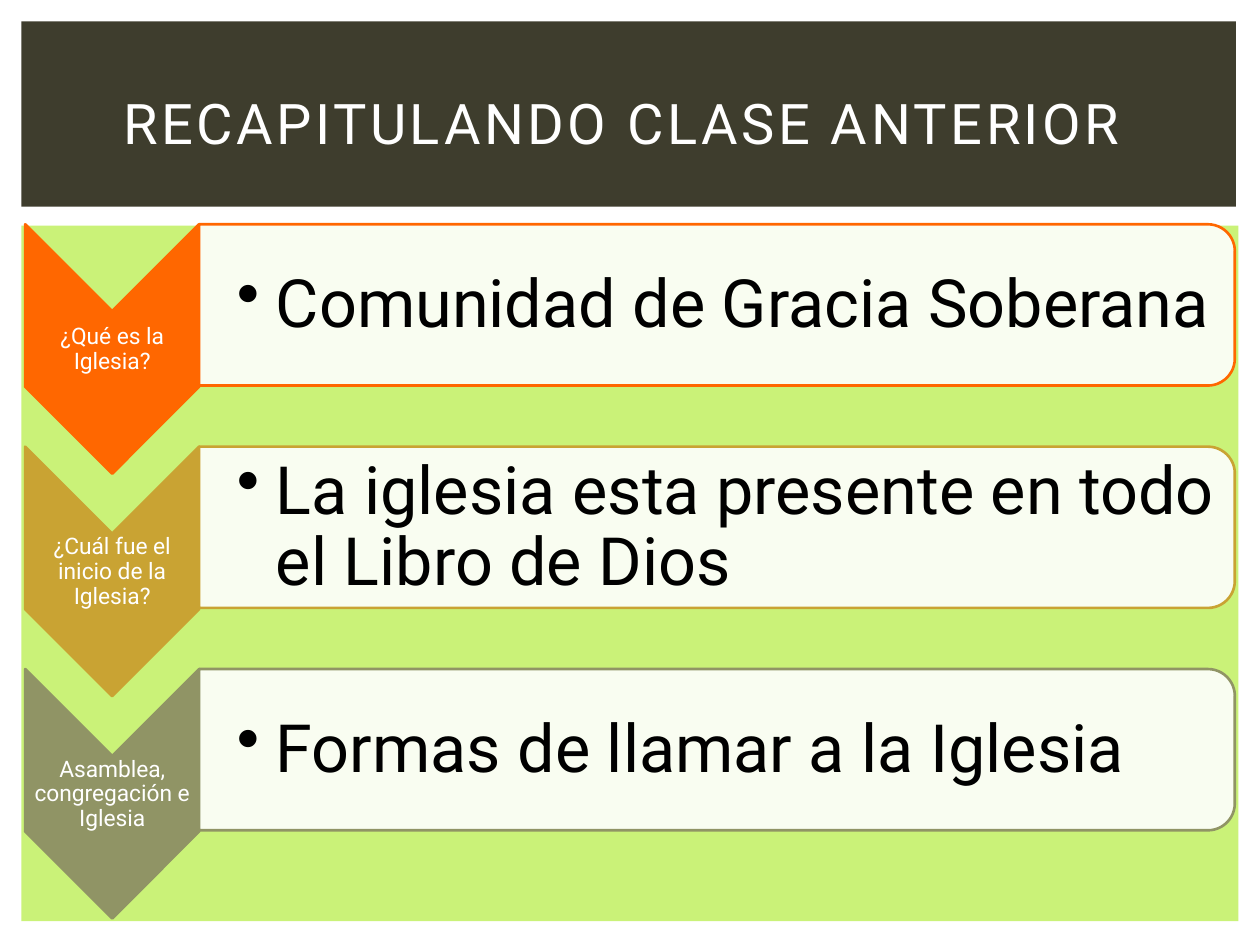
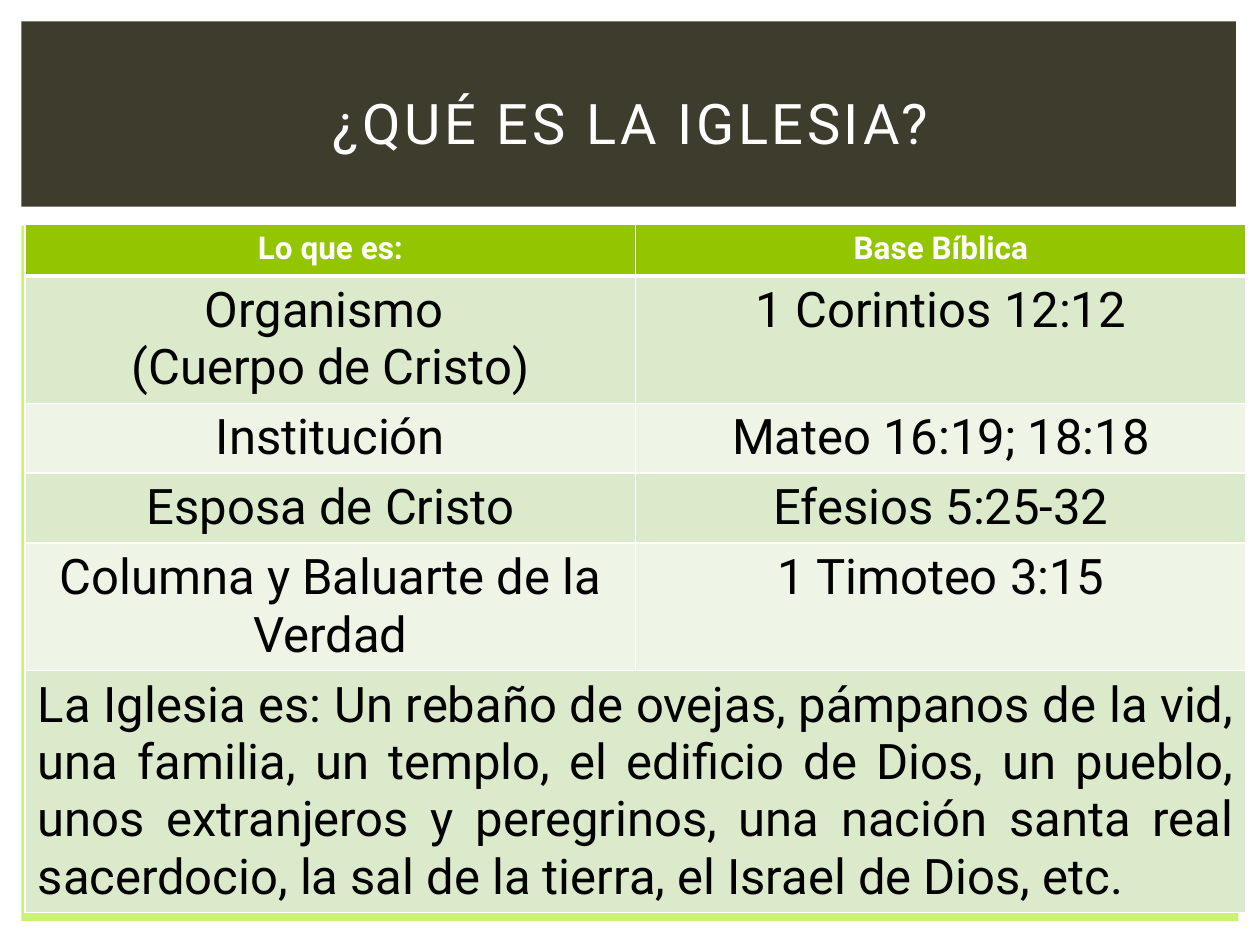
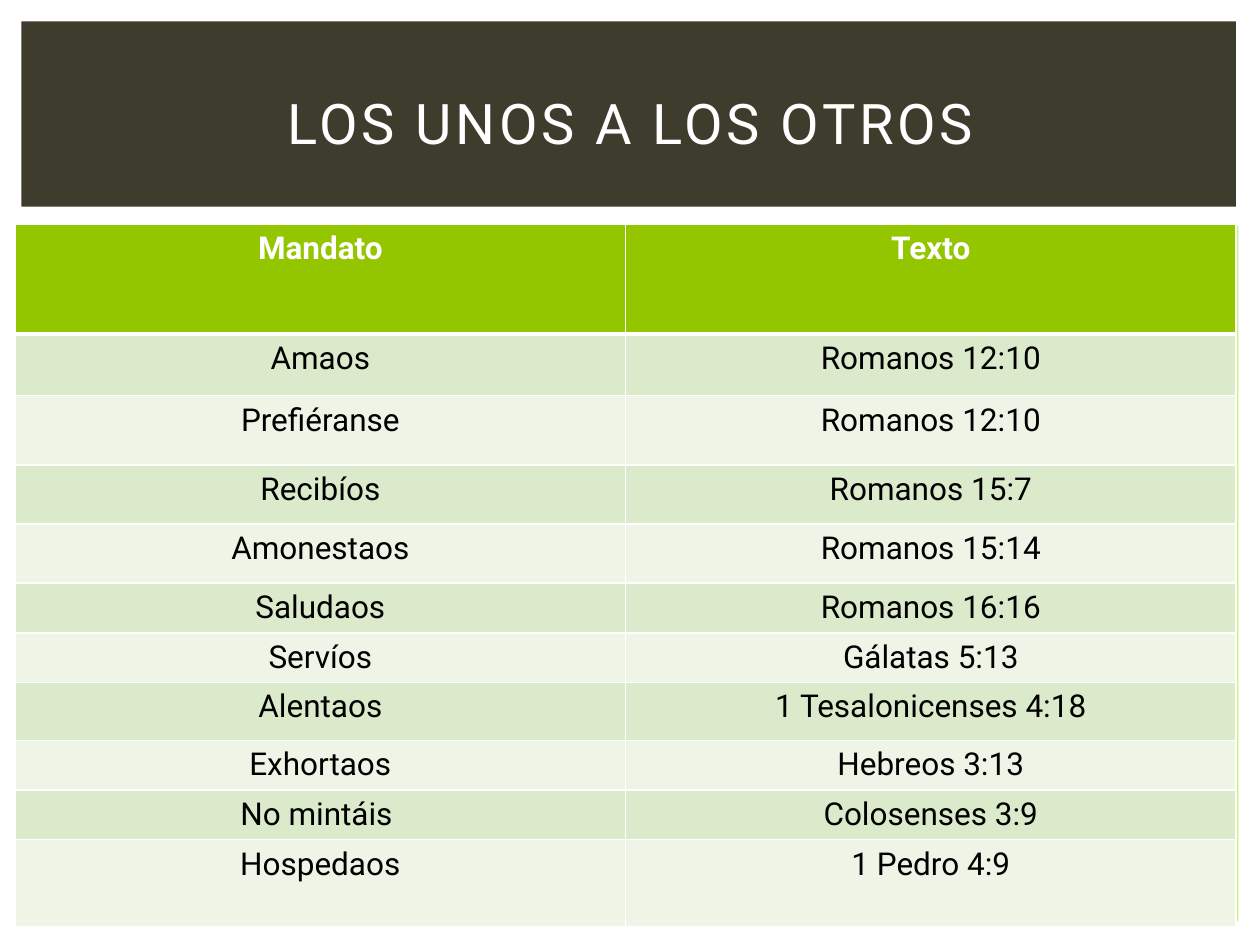
from dataclasses import dataclass

from lxml.etree import SubElement
from pptx import Presentation
from pptx.dml.color import RGBColor
from pptx.enum.shapes import MSO_SHAPE
from pptx.enum.text import MSO_ANCHOR, MSO_AUTO_SIZE, PP_ALIGN
from pptx.oxml.ns import qn
from pptx.util import Inches, Pt

COLUMNS, ROWS = 100, 75
CELL = Inches(0.1)
FONT = "Roboto"
WHITE, BLACK = "FFFFFF", "000000"
PANEL_GREEN, BAND_OLIVE = "CAF278", "3E3D2D"
HEADER_GREEN = "94C600"
STRIPES = ("DCEACC", "EEF5E7")


@dataclass
class Box:
    left: float
    top: float
    width: float
    height: float

    def inner(self, left, top, width, height):
        return Box(self.left + left, self.top + top, width, height)

    def turned(self):
        shift = (self.width - self.height) / 2
        return Box(self.left + shift, self.top - shift, self.height, self.width)

    def lengths(self):
        return [round(value * CELL) for value in (self.left, self.top, self.width, self.height)]


SLIDE = Box(0, 0, COLUMNS, ROWS)
PANEL = SLIDE.inner(1.7, 17.9, 96.6, 55.2)
BAND = SLIDE.inner(1.7, 1.7, 96.4, 14.7)
TITLE = BAND.inner(2.5, 2.2, 91.7, 11.5)
DIAGRAM = SLIDE.inner(2, 17.8, 96, 55.1)

TITLE_FORMAT = {"size": Pt(32), "color": WHITE}
STEP_FORMAT = {"size": Pt(13), "color": WHITE}
BULLET_FORMAT = {"size": Pt(38), "color": BLACK}
HEADER_FORMAT = {"size": Pt(18), "color": WHITE, "bold": True}

STEPS = [
    ("FF6700", "¿Qué es la Iglesia?", "Comunidad de Gracia Soberana"),
    ("C9A333", "¿Cuál fue el inicio de la Iglesia?",
     "La iglesia esta presente en todo el Libro de Dios"),
    ("909465", "Asamblea, congregación e Iglesia", "Formas de llamar a la Iglesia"),
]

CHURCH_ROWS = [
    ("Lo que es:", "Base Bíblica"),
    ("Organismo \n(Cuerpo de Cristo)", "1 Corintios 12:12"),
    ("Institución", "Mateo 16:19; 18:18"),
    ("Esposa de Cristo", "Efesios 5:25-32"),
    ("Columna y Baluarte de la Verdad", "1 Timoteo 3:15"),
    ("La Iglesia es: Un rebaño de ovejas, pámpanos de la vid, una familia, un templo, "
     "el edificio de Dios, un pueblo, unos extranjeros y peregrinos, una nación santa real "
     "sacerdocio, la sal de la tierra, el Israel de Dios, etc. ",),
]
CHURCH_HEIGHTS = [4.1] * 5 + [12.2]

COMMAND_ROWS = [
    ("Mandato", "Texto"),
    ("Amaos", "Romanos 12:10"),
    ("Prefiéranse", "Romanos 12:10"),
    ("Recibíos", "Romanos 15:7"),
    ("Amonestaos", "Romanos 15:14"),
    ("Saludaos", "Romanos 16:16"),
    ("Servíos", "Gálatas 5:13"),
    ("Alentaos", "1 Tesalonicenses 4:18"),
    ("Exhortaos", "Hebreos 3:13"),
    ("No mintáis ", "Colosenses 3:9"),
    ("Hospedaos", "1 Pedro 4:9"),
]
COMMAND_HEIGHTS = [8.7, 4.9, 5.5, 4.7, 4.7, 3.9, 3.9, 4.6, 3.9, 3.9, 6.9]


def paint(color_format, color):
    color_format.rgb = RGBColor.from_string(color)


def set_attributes(target, values):
    for name, value in values.items():
        setattr(target, name, value)


def write(frame, text, format_values, alignment=PP_ALIGN.CENTER):
    font_values = {"name": FONT, "bold": False, **format_values}
    color = font_values.pop("color")
    for index, line in enumerate(text.split("\n")):
        paragraph = frame.add_paragraph() if index else frame.paragraphs[0]
        paragraph.alignment = alignment
        run = paragraph.add_run()
        run.text = line
        set_attributes(run.font, font_values)
        paint(run.font.color, color)


def add_preset(slide, kind, box, fill, line=None):
    shape = slide.shapes.add_shape(kind, *box.lengths())
    shape.shadow.inherit = False
    shape.fill.solid()
    paint(shape.fill.fore_color, fill)
    if line:
        shape.line.width = Pt(1.5)
        paint(shape.line.color, line)
    else:
        shape.line.fill.background()
    return shape


def add_turned(slide, kind, box, fill, line):
    shape = add_preset(slide, kind, box.turned(), fill, line)
    shape.rotation = 90
    return shape


def add_label(slide, box, text, format_values, alignment, inset, left_inset):
    frame = slide.shapes.add_textbox(*box.lengths()).text_frame
    set_attributes(frame, {
        "word_wrap": True,
        "vertical_anchor": MSO_ANCHOR.MIDDLE,
        "margin_left": Inches(left_inset),
        "margin_top": Inches(inset),
        "margin_right": Inches(inset),
        "margin_bottom": Inches(inset),
    })
    write(frame, text, format_values, alignment)
    paragraph = frame.paragraphs[0]
    paragraph.line_spacing = 0.9
    return paragraph


def add_bullet(paragraph):
    properties = paragraph._p.get_or_add_pPr()
    properties.set("marL", str(Inches(0.31)))
    properties.set("indent", str(-Inches(0.31)))
    SubElement(properties, qn("a:buChar")).set("char", "•")


def decorate_layout(slide):
    for position, (box, color) in enumerate([(PANEL, PANEL_GREEN), (BAND, BAND_OLIVE)], 2):
        shape = add_preset(slide, MSO_SHAPE.RECTANGLE, box, color)
        slide.slide_layout.shapes.element.insert(position, shape.element)


def add_titled_slide(presentation, text):
    slide = presentation.slides.add_slide(presentation.slide_layouts[5])
    title = slide.shapes.title
    set_attributes(title, dict(zip(("left", "top", "width", "height"), TITLE.lengths())))
    frame = title.text_frame
    set_attributes(frame, {
        "word_wrap": True,
        "auto_size": MSO_AUTO_SIZE.NONE,
        "vertical_anchor": MSO_ANCHOR.MIDDLE,
    })
    write(frame, text, TITLE_FORMAT)
    frame.paragraphs[0].runs[0].font._element.set("spc", "200")
    return slide


def add_step(slide, box, color, question, answer):
    chevron = box.inner(0, 0, 13.8, box.height)
    bar = box.inner(chevron.width, 0, box.width - chevron.width, 12.8)
    add_turned(slide, MSO_SHAPE.CHEVRON, chevron, color, color)
    add_label(slide, chevron.inner(0, 7, chevron.width, 5.9), question,
              STEP_FORMAT, PP_ALIGN.CENTER, 0.01, 0.01)
    shape = add_turned(slide, MSO_SHAPE.ROUND_2_SAME_RECTANGLE, bar, WHITE, color)
    fill_color = shape.element.spPr.find(qn("a:solidFill"))[0]
    SubElement(fill_color, qn("a:alpha")).set("val", "90000")
    add_bullet(add_label(slide, bar.inner(0, 0.7, bar.width - 0.6, 11.6), answer,
                         BULLET_FORMAT, PP_ALIGN.LEFT, 0.03, 0.3))


def add_diagram(slide, box):
    step_height = 19.8
    pitch = (box.height - step_height) / (len(STEPS) - 1)
    for index, step in enumerate(STEPS):
        add_step(slide, box.inner(0, index * pitch, box.width, step_height), *step)


def set_borders(cell, top, bottom):
    properties = cell._tc.get_or_add_tcPr()
    widths = {"a:lnL": 1, "a:lnR": 1, "a:lnT": top, "a:lnB": bottom}
    for index, (tag, width) in enumerate(widths.items()):
        line = SubElement(properties, qn(tag))
        line.set("w", str(Pt(width)))
        SubElement(SubElement(line, qn("a:solidFill")), qn("a:srgbClr")).set("val", WHITE)
        properties.insert(index, line)


def add_striped_table(slide, box, rows, heights, text_size):
    column_count = len(rows[0])
    graphic_frame = slide.shapes.add_table(len(rows), column_count, *box.lengths())
    table = graphic_frame.table
    for row_index, (texts, height) in enumerate(zip(rows, heights)):
        table.rows[row_index].height = round(height * CELL)
        is_header = row_index == 0
        fill = HEADER_GREEN if is_header else STRIPES[(row_index - 1) % 2]
        format_values = HEADER_FORMAT if is_header else {"size": Pt(text_size), "color": BLACK}
        spans = len(texts) < column_count
        if spans:
            table.cell(row_index, 0).merge(table.cell(row_index, column_count - 1))
        for column_index in range(column_count):
            cell = table.cell(row_index, column_index)
            cell.fill.solid()
            paint(cell.fill.fore_color, fill)
            set_borders(cell, 3 if row_index == 1 else 1, 3 if is_header else 1)
            if column_index < len(texts):
                alignment = PP_ALIGN.JUSTIFY if spans else PP_ALIGN.CENTER
                write(cell.text_frame, texts[column_index], format_values, alignment)
    graphic_frame.height = round(box.height * CELL)


def main():
    presentation = Presentation()
    presentation.slide_width = COLUMNS * CELL
    presentation.slide_height = ROWS * CELL

    recap = add_titled_slide(presentation, "RECAPITULANDO CLASE ANTERIOR ")
    decorate_layout(recap)
    add_diagram(recap, DIAGRAM)

    church = add_titled_slide(presentation, "¿QUÉ ES LA IGLESIA?")
    add_striped_table(church, SLIDE.inner(2, 17.8, 96.9, 55.7), CHURCH_ROWS, CHURCH_HEIGHTS, 28)

    commands = add_titled_slide(presentation, "LOS UNOS A LOS OTROS")
    add_striped_table(commands, SLIDE.inner(1.2, 17.8, 96.9, 56), COMMAND_ROWS, COMMAND_HEIGHTS, 18)

    presentation.save("out.pptx")


if __name__ == "__main__":
    main()
